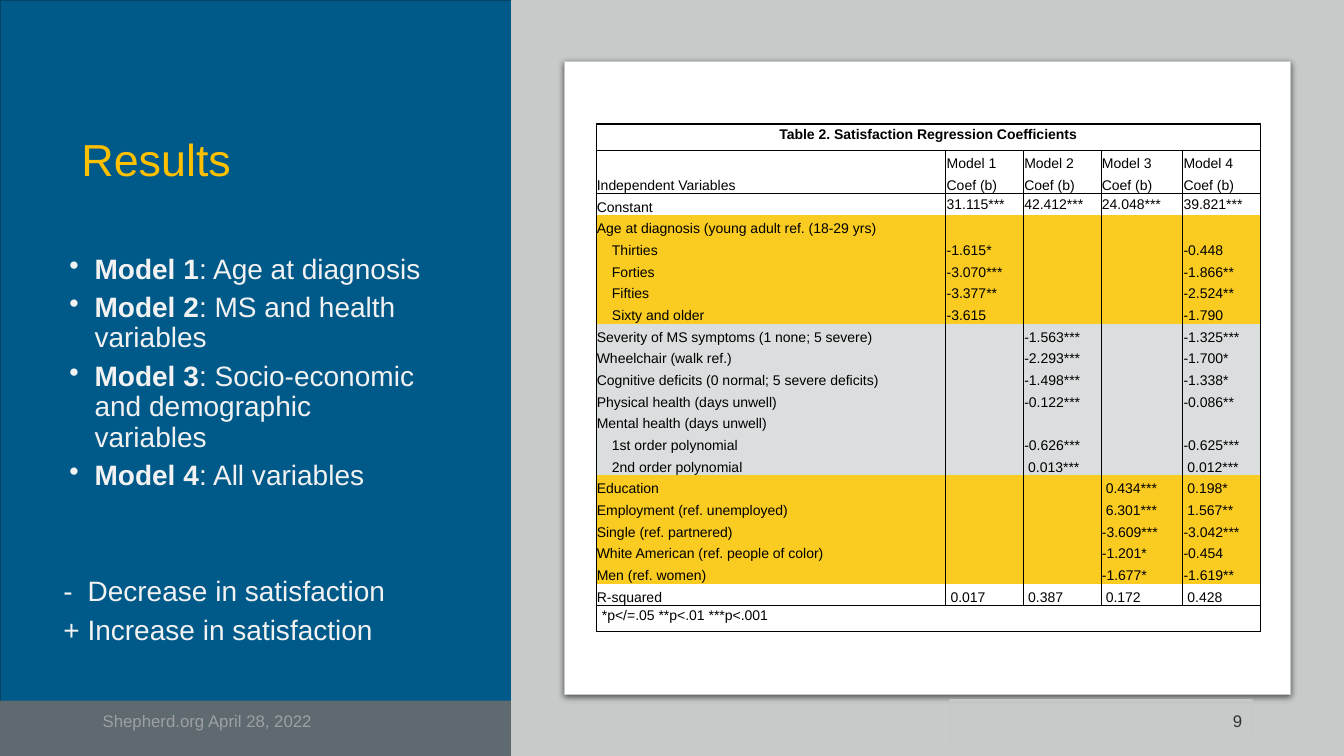
from dataclasses import dataclass
from typing import NamedTuple

from lxml.etree import SubElement
from pptx import Presentation
from pptx.dml.color import RGBColor
from pptx.enum.shapes import MSO_SHAPE
from pptx.enum.text import MSO_ANCHOR, PP_ALIGN
from pptx.oxml.ns import qn
from pptx.util import Inches, Pt

COLS, ROWS = 1333, 750
UNIT = Inches(0.01)


@dataclass(frozen=True)
class Theme:
    font: str = "Arial"
    blue: str = "005A89"
    navy: str = "004365"
    slate: str = "5E6970"
    panel: str = "C8CACA"
    frame: str = "C3C8C8"
    white: str = "FFFFFF"
    black: str = "000000"
    amber: str = "FFC000"
    pale: str = "F2F2F2"
    muted: str = "9DA1A4"
    dark: str = "303030"
    gold: str = "FACB21"
    mist: str = "DBDEDE"
    title: int = 32
    body: int = 20
    foot: int = 12
    grid: int = 10


THEME = Theme()


class Box(NamedTuple):
    col: float
    row: float
    wide: float
    high: float


class Block(NamedTuple):
    box: Box
    fill: str | None = None
    line: str | None = None
    weight: float = 1
    kind: MSO_SHAPE = MSO_SHAPE.RECTANGLE


class Point(NamedTuple):
    lead: str
    text: str
    bullet: str | None = None
    before: float = 0
    hang: int = 25
    left: int = 31


class Line(NamedTuple):
    label: str
    cells: tuple[str, str, str, str] = ("", "", "", "")
    tone: str | None = None
    inset: int = 1
    anchor: MSO_ANCHOR = MSO_ANCHOR.BOTTOM
    rule: float = 0


SIDE = Block(Box(0, 0, COLS, 705), THEME.blue, THEME.navy)
BAND = Block(Box(0, 695, COLS, 55), THEME.slate)
PANEL = Block(Box(507, 0, 826, ROWS), THEME.panel)
CARD = Block(Box(560, 61, 720, 628), THEME.white, THEME.panel, 0.75, MSO_SHAPE.ROUNDED_RECTANGLE)
PAGE = Block(Box(942, 695, 300, 40), None, THEME.frame, 1.5)

POINTS = [
    Point("Model 1", ": Age at diagnosis", "•"),
    Point("Model 2", ": MS and health variables", "•"),
    Point("Model 3", ": Socio-economic and demographic variables", "•"),
    Point("Model 4", ": All variables", "•"),
    Point("", "-\tDecrease in satisfaction", before=55, hang=24, left=24),
    Point("", "+\tIncrease in satisfaction", hang=24, left=24),
]

GOLD, MIST, DEEP = THEME.gold, THEME.mist, 16
LINES = [
    Line("", ("Model 1", "Model 2", "Model 3", "Model 4")),
    Line("Independent Variables", ("Coef (b)",) * 4, rule=1),
    Line("Constant", ("31.115***", "42.412***", "24.048***", "39.821***"), anchor=MSO_ANCHOR.MIDDLE),
    Line("Age at diagnosis (young adult ref. (18-29 yrs)", tone=GOLD),
    Line("Thirties", ("-1.615*", "", "", "-0.448"), GOLD, DEEP),
    Line("Forties", ("-3.070***", "", "", "-1.866**"), GOLD, DEEP),
    Line("Fifties", ("-3.377**", "", "", "-2.524**"), GOLD, DEEP),
    Line("Sixty and older", ("-3.615", "", "", "-1.790"), GOLD, DEEP),
    Line("Severity of MS symptoms (1 none; 5 severe)", ("", "-1.563***", "", "-1.325***"), MIST),
    Line("Wheelchair (walk ref.)", ("", "-2.293***", "", "-1.700*"), MIST),
    Line("Cognitive deficits (0 normal; 5 severe deficits)", ("", "-1.498***", "", "-1.338*"), MIST),
    Line("Physical health (days unwell)", ("", "-0.122***", "", "-0.086**"), MIST),
    Line("Mental health (days unwell)", tone=MIST),
    Line("1st order polynomial", ("", "-0.626***", "", "-0.625***"), MIST, DEEP),
    Line("2nd order polynomial", ("", " 0.013***", "", " 0.012***"), MIST, DEEP),
    Line("Education", ("", "", " 0.434***", " 0.198*"), GOLD),
    Line("Employment (ref. unemployed)", ("", "", " 6.301***", " 1.567**"), GOLD),
    Line("Single (ref. partnered)", ("", "", "-3.609***", "-3.042***"), GOLD),
    Line("White American (ref. people of color)", ("", "", "-1.201*", "-0.454"), GOLD),
    Line("Men (ref. women)", ("", "", "-1.677*", "-1.619**"), GOLD),
    Line("R-squared", (" 0.017", " 0.387", " 0.172", " 0.428"), rule=1),
]
GRID = Box(591, 123, 658, 503.5)
WIDTHS = (347, 77, 77, 81, 77)
HEIGHTS = (26, *[21.5] * len(LINES), 26)


def span(units: float) -> int:
    return round(units * UNIT)


def place(box: Box) -> list[int]:
    return [span(side) for side in box]


def write(para, text: str, *, size: int, color: str, bold: bool = False, align=None) -> None:
    if align is not None:
        para.alignment = align
    if not text:
        SubElement(para._p, qn("a:endParaRPr"), sz=str(size * 100))
        return
    run = para.add_run()
    run.text = text
    font = run.font
    font.name, font.size, font.bold = THEME.font, Pt(size), bold
    font.color.rgb = RGBColor.from_string(color)


def draw(slide, block: Block):
    shape = slide.shapes.add_shape(block.kind, *place(block.box))
    shape.shadow.inherit = False
    if block.fill:
        shape.fill.solid()
        shape.fill.fore_color.rgb = RGBColor.from_string(block.fill)
    else:
        shape.fill.background()
    if block.line:
        shape.line.color.rgb = RGBColor.from_string(block.line)
        shape.line.width = Pt(block.weight)
    else:
        shape.line.fill.background()
    return shape


def shade(shape) -> None:
    effects = shape._element.spPr.find(qn("a:effectLst"))
    outer = SubElement(effects, qn("a:outerShdw"), blurRad=str(Pt(4.5)), dist=str(Pt(1.5)),
                       dir="5400000", algn="t", rotWithShape="0")
    color = SubElement(outer, qn("a:srgbClr"), val=THEME.black)
    SubElement(color, qn("a:alpha"), val="63000")


def frame(slide, box: Box, anchor=MSO_ANCHOR.MIDDLE):
    text = slide.shapes.add_textbox(*place(box)).text_frame
    text.word_wrap = True
    text.vertical_anchor = anchor
    return text


def list_points(slide, box: Box) -> None:
    text = frame(slide, box, MSO_ANCHOR.TOP)
    for index, point in enumerate(POINTS):
        para = text.add_paragraph() if index else text.paragraphs[0]
        props = para._p.get_or_add_pPr()
        props.set("marL", str(span(point.left)))
        props.set("indent", str(-span(point.hang)))
        if point.bullet:
            SubElement(props, qn("a:buChar"), char=point.bullet)
        para.line_spacing = 0.9
        para.space_after = Pt(6)
        if point.before:
            para.space_before = Pt(point.before)
        for part, bold in ((point.lead, True), (point.text, False)):
            if part:
                write(para, part, size=THEME.body, color=THEME.pale, bold=bold)


def edge(cell, **weights: float) -> None:
    props = cell._tc.get_or_add_tcPr()
    for index, (side, weight) in enumerate(weights.items()):
        line = props.makeelement(qn(f"a:ln{side}"), {"w": str(Pt(weight))})
        props.insert(index, line)
        if weight:
            SubElement(SubElement(line, qn("a:solidFill")), qn("a:srgbClr"), val=THEME.black)
        else:
            SubElement(line, qn("a:noFill"))


def fill_cell(cell, text: str, tone: str | None, pads: tuple, anchor, **form) -> None:
    cell.margin_left, cell.margin_top, cell.margin_right, cell.margin_bottom = map(span, pads)
    cell.vertical_anchor = anchor
    if tone:
        cell.fill.solid()
        cell.fill.fore_color.rgb = RGBColor.from_string(tone)
    else:
        cell.fill.background()
    write(cell.text_frame.paragraphs[0], text, size=THEME.grid, color=THEME.black, **form)


def add_grid(slide) -> None:
    table = slide.shapes.add_table(len(HEIGHTS), len(WIDTHS), *place(GRID)).table
    table.first_row = table.horz_banding = False
    for col, wide in zip(table.columns, WIDTHS):
        col.width = span(wide)
    for row, high in zip(table.rows, HEIGHTS):
        row.height = span(high)
    last, end = len(HEIGHTS) - 1, len(WIDTHS) - 1
    for row in (0, last):
        table.cell(row, 0).merge(table.cell(row, end))
    wide_pads = (6, 3, 6, 3)
    fill_cell(table.cell(0, 0), "Table 2. Satisfaction Regression Coefficients", None, wide_pads,
              MSO_ANCHOR.TOP, bold=True, align=PP_ALIGN.CENTER)
    fill_cell(table.cell(last, 0), "*p</=.05 **p<.01 ***p<.001", None, wide_pads, MSO_ANCHOR.TOP)
    for row, line in enumerate(LINES, 1):
        fill_cell(table.cell(row, 0), line.label, line.tone, (line.inset, 1, 1, 0), MSO_ANCHOR.BOTTOM)
        for col, text in enumerate(line.cells, 1):
            fill_cell(table.cell(row, col), text, line.tone, (1, 1, 1, 0), line.anchor)
    rules = (1, 1, *[line.rule for line in LINES], 1)
    for row in range(last + 1):
        for col in range(end + 1):
            cell = table.cell(row, col)
            inner = cell.is_spanned
            edge(cell, L=0 if inner else 0.5, R=0 if inner and col < end else 0.5,
                 T=rules[row], B=rules[row + 1])


def main() -> None:
    deck = Presentation()
    deck.slide_width, deck.slide_height = span(COLS), span(ROWS)
    slide = deck.slides.add_slide(deck.slide_layouts[6])
    for block in (SIDE, BAND):
        draw(slide, block)
    write(frame(slide, Box(71, 69, 383, 177)).paragraphs[0], "Results",
          size=THEME.title, color=THEME.amber)
    list_points(slide, Box(53, 248, 383, 414))
    draw(slide, PANEL)
    card = draw(slide, CARD)
    card.adjustments[0] = 0
    shade(card)
    write(frame(slide, Box(92, 695, 300, 40)).paragraphs[0], "Shepherd.org April 28, 2022",
          size=THEME.foot, color=THEME.muted)
    page = draw(slide, PAGE).text_frame
    page.vertical_anchor = MSO_ANCHOR.MIDDLE
    write(page.paragraphs[0], "9", size=THEME.foot, color=THEME.dark, align=PP_ALIGN.RIGHT)
    add_grid(slide)
    deck.save("out.pptx")


if __name__ == "__main__":
    main()
